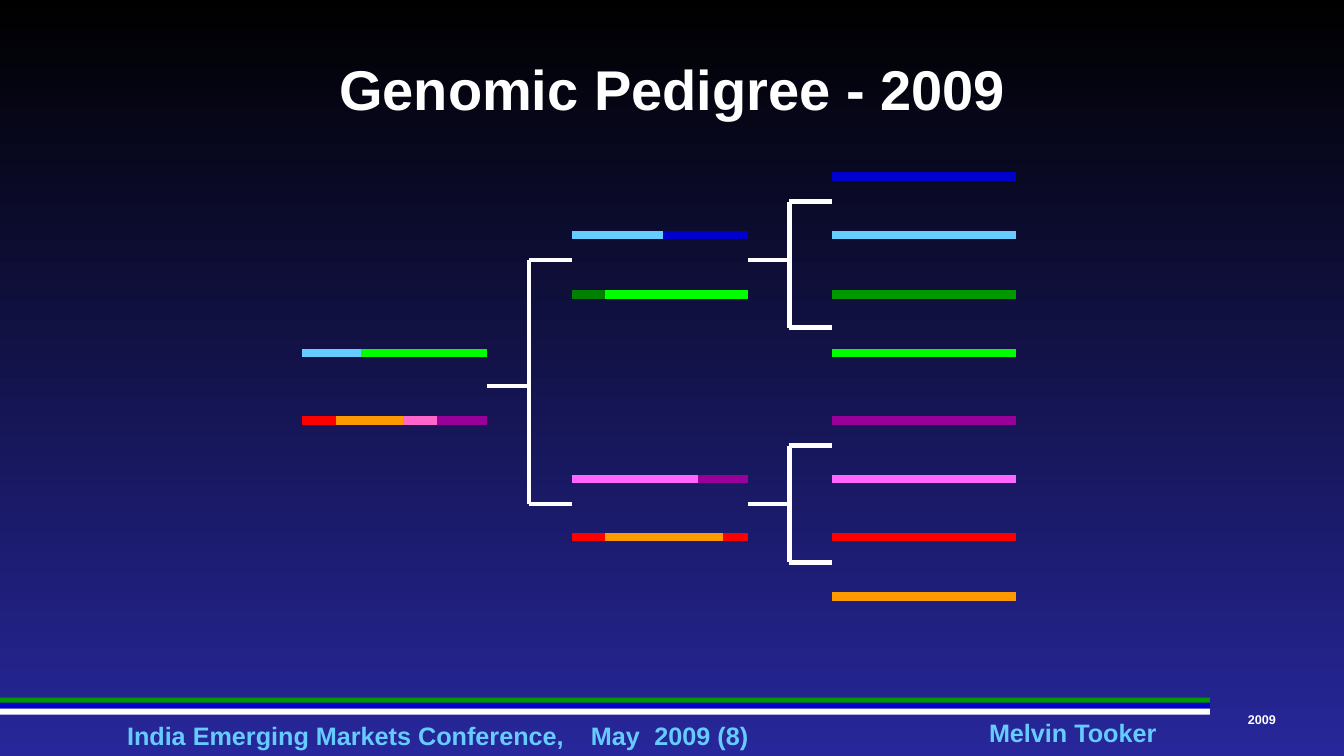
"""Build the genomic pedigree slide."""
from dataclasses import dataclass

from lxml.etree import SubElement
from pptx import Presentation
from pptx.dml.color import RGBColor
from pptx.enum.shapes import MSO_CONNECTOR, MSO_SHAPE
from pptx.enum.text import MSO_ANCHOR, PP_ALIGN
from pptx.oxml.ns import qn
from pptx.slide import Slide
from pptx.util import Inches, Pt

BLACK = RGBColor(0x00, 0x00, 0x00)
INDIGO = RGBColor(0x27, 0x27, 0x9B)
WHITE = RGBColor(0xFF, 0xFF, 0xFF)
BLUE = RGBColor(0x00, 0x00, 0xCC)
SKY = RGBColor(0x66, 0xCC, 0xFF)
GREEN = RGBColor(0x00, 0x99, 0x00)
DARK_GREEN = RGBColor(0x00, 0x80, 0x00)
LIME = RGBColor(0x00, 0xFF, 0x00)
PURPLE = RGBColor(0x99, 0x00, 0x99)
PINK = RGBColor(0xFF, 0x66, 0xFF)
ROSE = RGBColor(0xFF, 0x66, 0xCC)
RED = RGBColor(0xFF, 0x00, 0x00)
ORANGE = RGBColor(0xFF, 0x99, 0x00)


@dataclass(frozen=True)
class Chromosome:
    """A horizontal bar of coloured segments, each given with its right end."""
    left: float
    y: float
    segments: tuple[tuple[RGBColor, float], ...]


@dataclass(frozen=True)
class Bracket:
    """A fork from one animal to its two parents."""
    left: float
    spine: float
    right: float
    top: float
    middle: float
    bottom: float


@dataclass(frozen=True)
class Label:
    """A line of bold text and its box."""
    text: str
    left: float
    top: float
    width: float
    height: float
    size: int
    color: RGBColor
    alignment: PP_ALIGN = PP_ALIGN.CENTER
    wrap: bool = True
    tabs: tuple[float, ...] = ()


GRANDPARENTS = (
    (1.75, BLUE), (2.33, SKY), (2.92, GREEN), (3.5, LIME),
    (4.17, PURPLE), (4.75, PINK), (5.33, RED), (5.92, ORANGE),
)
CHROMOSOMES = (
    *(Chromosome(8.25, y, ((color, 10.08),)) for y, color in GRANDPARENTS),
    Chromosome(5.67, 2.33, ((SKY, 6.58), (BLUE, 7.42))),
    Chromosome(5.67, 2.92, ((DARK_GREEN, 6), (LIME, 7.42))),
    Chromosome(5.67, 4.75, ((PINK, 6.92), (PURPLE, 7.42))),
    Chromosome(5.67, 5.33, ((RED, 6), (ORANGE, 7.17), (RED, 7.42))),
    Chromosome(3, 3.5, ((SKY, 3.58), (LIME, 4.83))),
    Chromosome(3, 4.17, ((RED, 3.33), (ORANGE, 4), (ROSE, 4.33), (PURPLE, 4.83))),
)
BRACKETS = (
    Bracket(4.83, 5.25, 5.67, 2.58, 3.83, 5),
    Bracket(7.42, 7.83, 8.25, 2, 2.58, 3.25),
    Bracket(7.42, 7.83, 8.25, 4.42, 5, 5.58),
)
STRIPES = ((6.92, GREEN), (6.97, BLUE), (7.03, WHITE))
LABELS = (
    Label("India Emerging Markets Conference,\tMay\t2009 (8)", 1.26, 7.15, 7.85, 0.3,
          18, SKY, PP_ALIGN.LEFT, tabs=(4.6, 5.23)),
    Label("Melvin Tooker", 9.8, 7.12, 1.68, 0.3, 18, SKY, wrap=False),
    Label("2009", 12.33, 7.06, 0.37, 0.15, 9, WHITE),
    Label("Genomic Pedigree - 2009", 0.33, 0.25, 12.67, 1.25, 40, WHITE),
)


def set_background(slide: Slide) -> None:
    """Fill the background with a vertical gradient."""
    fill = slide.background.fill
    fill.gradient()
    fill.gradient_angle = 270
    for stop, color in zip(fill.gradient_stops, (BLACK, INDIGO)):
        stop.color.rgb = color


def add_stripe(slide: Slide, top: float, color: RGBColor) -> None:
    """Add one footer stripe."""
    shape = slide.shapes.add_shape(
        MSO_SHAPE.RECTANGLE, 0, Inches(top), Inches(12), Inches(0.06))
    shape.shadow.inherit = False
    shape.fill.solid()
    shape.fill.fore_color.rgb = color
    shape.line.fill.background()


def add_line(slide: Slide, start: tuple[float, float], end: tuple[float, float],
             color: RGBColor, width: float) -> None:
    """Add a straight line without a shadow."""
    connector = slide.shapes.add_connector(
        MSO_CONNECTOR.STRAIGHT, *map(Inches, (*start, *end)))
    connector.line.color.rgb = color
    connector.line.width = Pt(width)
    SubElement(connector._element.spPr, qn("a:effectLst"))


def add_chromosome(slide: Slide, chromosome: Chromosome) -> None:
    """Add the segments of a chromosome from left to right."""
    left = chromosome.left
    for color, right in chromosome.segments:
        add_line(slide, (left, chromosome.y), (right, chromosome.y), color, 6)
        left = right


def add_bracket(slide: Slide, bracket: Bracket) -> None:
    """Add the spine, the stem and both arms of a bracket."""
    spine = bracket.spine
    add_line(slide, (spine, bracket.top), (spine, bracket.bottom), WHITE, 3)
    add_line(slide, (bracket.left, bracket.middle), (spine, bracket.middle), WHITE, 3)
    for y in (bracket.top, bracket.bottom):
        add_line(slide, (spine, y), (bracket.right, y), WHITE, 3)


def add_label(slide: Slide, label: Label) -> None:
    """Add a text box holding one line of text."""
    shape = slide.shapes.add_textbox(
        *map(Inches, (label.left, label.top, label.width, label.height)))
    frame = shape.text_frame
    frame.word_wrap = label.wrap
    frame.vertical_anchor = MSO_ANCHOR.MIDDLE
    frame.margin_left = frame.margin_right = frame.margin_top = frame.margin_bottom = 0
    paragraph = frame.paragraphs[0]
    paragraph.alignment = label.alignment
    if label.tabs:
        tab_list = SubElement(paragraph._p.get_or_add_pPr(), qn("a:tabLst"))
        for position in label.tabs:
            SubElement(tab_list, qn("a:tab"), pos=str(Inches(position)), algn="l")
    run = paragraph.add_run()
    run.text = label.text
    run.font.name = "Arial"
    run.font.size = Pt(label.size)
    run.font.bold = True
    run.font.color.rgb = label.color


def main() -> None:
    """Build and save the presentation."""
    presentation = Presentation()
    presentation.slide_width = Inches(13.33)
    presentation.slide_height = Inches(7.5)
    slide = presentation.slides.add_slide(presentation.slide_layouts[6])
    set_background(slide)
    for top, color in STRIPES:
        add_stripe(slide, top, color)
    for label in LABELS:
        add_label(slide, label)
    for chromosome in CHROMOSOMES:
        add_chromosome(slide, chromosome)
    for bracket in BRACKETS:
        add_bracket(slide, bracket)
    presentation.save("out.pptx")


if __name__ == "__main__":
    main()
